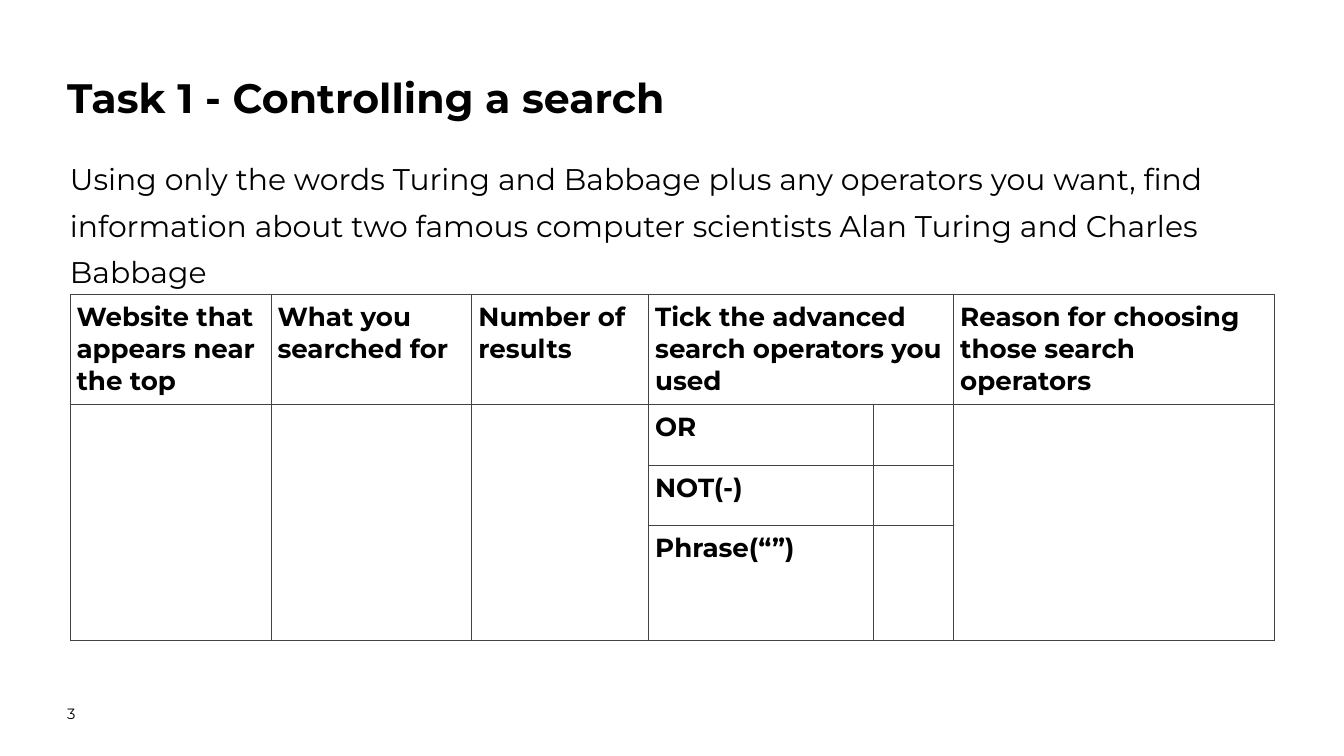
from lxml import etree
from pptx import Presentation
from pptx.dml.color import RGBColor
from pptx.enum.text import MSO_ANCHOR
from pptx.oxml.ns import qn
from pptx.util import Inches, Pt

TOP = MSO_ANCHOR.TOP
FONT = "Montserrat"
BLACK, BORDER = "000000", "434343"
BLANK_LAYOUT = 6
WIDTH, HEIGHT = 20, 11.25
MARGIN, TEXT_WIDTH = 1.04, 17.95

TITLE = "Task 1 - Controlling a search"
INSTRUCTIONS = (
    "Using only the words Turing and Babbage plus any operators you want, "
    "find information about two famous computer scientists Alan Turing and "
    "Charles Babbage"
)
PAGE_NUMBER = "3"
HEADINGS = {
    0: "Website that appears near the top",
    1: "What you searched for",
    2: "Number of results",
    3: "Tick the advanced search operators you used",
    5: "Reason for choosing those search operators",
}
OPERATORS = ["OR", "NOT(-)", "Phrase(“”)"]
OPERATOR_COLUMN, TICK_COLUMN = 3, 4
COLUMN_WIDTHS = [2.99, 2.99, 2.63, 3.34, 1.2, 4.77]
ROW_HEIGHTS = [1.64, 0.9, 0.9, 1.71]
TABLE_TOP = 4.38


def colour(value):
    return RGBColor.from_string(value)


def write(frame, text, size, bold=False, spacing=None):
    frame.word_wrap = True
    paragraph = frame.paragraphs[0]
    if spacing:
        paragraph.line_spacing = spacing
    run = paragraph.add_run()
    run.text = text
    run.font.name = FONT
    run.font.size = Pt(size)
    run.font.bold = bold
    run.font.color.rgb = colour(BLACK)


def add_text(slide, text, left, top, width, height, **text_format):
    box = slide.shapes.add_textbox(*map(Inches, (left, top, width, height)))
    frame = box.text_frame
    frame.margin_left = frame.margin_right = 0
    frame.margin_top = frame.margin_bottom = 0
    frame.vertical_anchor = TOP
    write(frame, text, **text_format)


def style_cell(cell):
    cell.fill.background()
    cell.margin_left = cell.margin_right = Inches(0.1)
    cell.margin_top = cell.margin_bottom = Inches(0.1)
    cell.vertical_anchor = TOP
    properties = cell._tc.get_or_add_tcPr()
    for position, side in enumerate(("a:lnL", "a:lnR", "a:lnT", "a:lnB")):
        line = etree.Element(qn(side), w=str(Pt(0.75)))
        fill = etree.SubElement(line, qn("a:solidFill"))
        etree.SubElement(fill, qn("a:srgbClr"), val=BORDER)
        properties.insert(position, line)


def add_search_table(slide):
    table = slide.shapes.add_table(
        len(ROW_HEIGHTS), len(COLUMN_WIDTHS), Inches(MARGIN), Inches(TABLE_TOP),
        Inches(sum(COLUMN_WIDTHS)), Inches(sum(ROW_HEIGHTS)),
    ).table
    table.first_row = table.horz_banding = False
    for column, width in zip(table.columns, COLUMN_WIDTHS):
        column.width = Inches(width)
    for row, height in zip(table.rows, ROW_HEIGHTS):
        row.height = Inches(height)
    for cell in table.iter_cells():
        style_cell(cell)

    table.cell(0, OPERATOR_COLUMN).merge(table.cell(0, TICK_COLUMN))
    for column, heading in HEADINGS.items():
        write(table.cell(0, column).text_frame, heading, size=28, bold=True)
        if column != OPERATOR_COLUMN:
            table.cell(1, column).merge(table.cell(len(OPERATORS), column))
    for row, operator in enumerate(OPERATORS, start=1):
        write(table.cell(row, OPERATOR_COLUMN).text_frame, operator, size=28, bold=True)


def main():
    presentation = Presentation()
    presentation.slide_width = Inches(WIDTH)
    presentation.slide_height = Inches(HEIGHT)
    slide = presentation.slides.add_slide(presentation.slide_layouts[BLANK_LAYOUT])
    add_text(slide, TITLE, 1, 0.97, TEXT_WIDTH, 1.78, size=44, bold=True, spacing=1.15)
    add_text(slide, PAGE_NUMBER, 1, 10.48, 1.57, 0.39, size=16)
    add_search_table(slide)
    add_text(slide, INSTRUCTIONS, MARGIN, 2.23, TEXT_WIDTH, 2.15, size=32, spacing=1.3)
    presentation.save("out.pptx")


if __name__ == "__main__":
    main()
